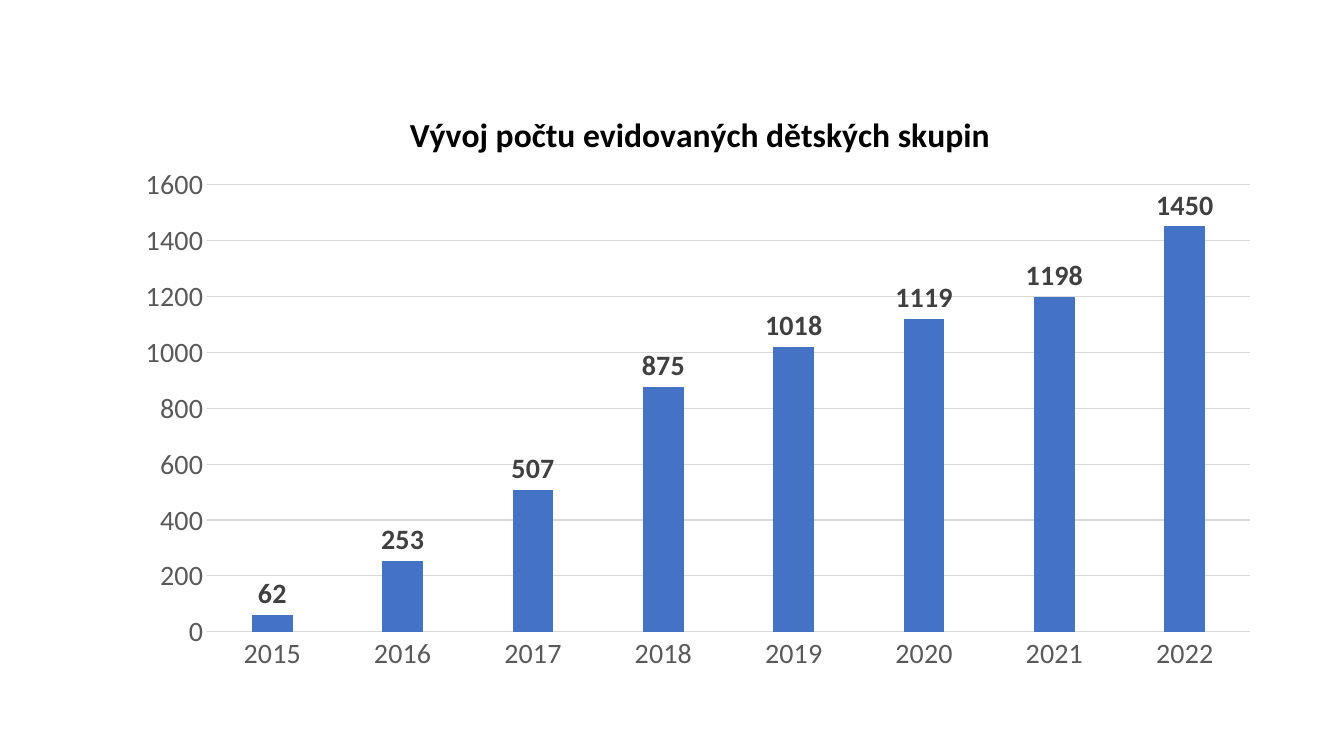
from lxml import etree
from pptx import Presentation
from pptx import util as u
from pptx.chart.data import CategoryChartData
from pptx.dml.color import RGBColor
from pptx.enum import chart as charts
from pptx.oxml.ns import qn

COLORS = {"bar": "4472C4", "grid": "D9D9D9", "axis": "595959",
          "label": "404040", "title": "000000"}
GROUPS_BY_YEAR = {"2015": 62, "2016": 253, "2017": 507, "2018": 875,
                  "2019": 1018, "2020": 1119, "2021": 1198, "2022": 1450}
PLOT_AREA = {"x": 0.07, "y": 0.16, "w": 0.91, "h": 0.75}


def style_font(font, size, color, bold=False):
    font.name = "Calibri"
    font.size = u.Pt(size)
    font.bold = bold
    font.color.rgb = RGBColor.from_string(COLORS[color])


presentation = Presentation()
presentation.slide_width = u.Cm(33.87)
presentation.slide_height = u.Cm(19.05)
slide = presentation.slides.add_slide(presentation.slide_layouts[6])

# Chart
chart_data = CategoryChartData(number_format="0")
chart_data.categories = GROUPS_BY_YEAR.keys()
chart_data.add_series("Series 1", GROUPS_BY_YEAR.values())
chart = slide.shapes.add_chart(
    charts.XL_CHART_TYPE.COLUMN_CLUSTERED,
    u.Cm(3.2), u.Cm(2.24), u.Cm(28.88), u.Cm(15.04), chart_data).chart
chart.has_legend = False
style_font(chart.font, 10, "title")

# Title
chart.has_title = True
chart.chart_title.include_in_layout = False
title_frame = chart.chart_title.text_frame
title_frame.text = "Vývoj počtu evidovaných dětských skupin"
style_font(title_frame.paragraphs[0].font, 24, "title", bold=True)

# Axes
for axis in (chart.category_axis, chart.value_axis):
    axis.major_tick_mark = charts.XL_TICK_MARK.NONE
    axis.minor_tick_mark = charts.XL_TICK_MARK.NONE
    style_font(axis.tick_labels.font, 20, "axis")

value_axis = chart.value_axis
value_axis.minimum_scale = 0
value_axis.maximum_scale = 1600
value_axis.major_unit = 200
value_axis.format.line.fill.background()
value_axis.has_major_gridlines = True
for line in (chart.category_axis.format.line, value_axis.major_gridlines.format.line):
    line.width = u.Pt(0.75)
    line.color.rgb = RGBColor.from_string(COLORS["grid"])

# Columns and their labels
plot = chart.plots[0]
plot.vary_by_categories = False
plot.gap_width = 219
plot.overlap = -27
series = plot.series[0]
series.format.fill.solid()
series.format.fill.fore_color.rgb = RGBColor.from_string(COLORS["bar"])
labels = series.data_labels
labels.show_value = True
labels.position = charts.XL_LABEL_POSITION.OUTSIDE_END
style_font(labels.font, 20, "label", bold=True)

# Fixed plot area, as fractions of the chart
plot_area = chart.element.find(".//" + qn("c:plotArea"))
for automatic_layout in plot_area.findall(qn("c:layout")):
    plot_area.remove(automatic_layout)
layout = etree.Element(qn("c:layout"))
plot_area.insert(0, layout)
manual = etree.SubElement(layout, qn("c:manualLayout"))
settings = {"layoutTarget": "inner", "xMode": "edge", "yMode": "edge", **PLOT_AREA}
for name, value in settings.items():
    etree.SubElement(manual, qn(f"c:{name}")).set("val", str(value))

presentation.save("out.pptx")
